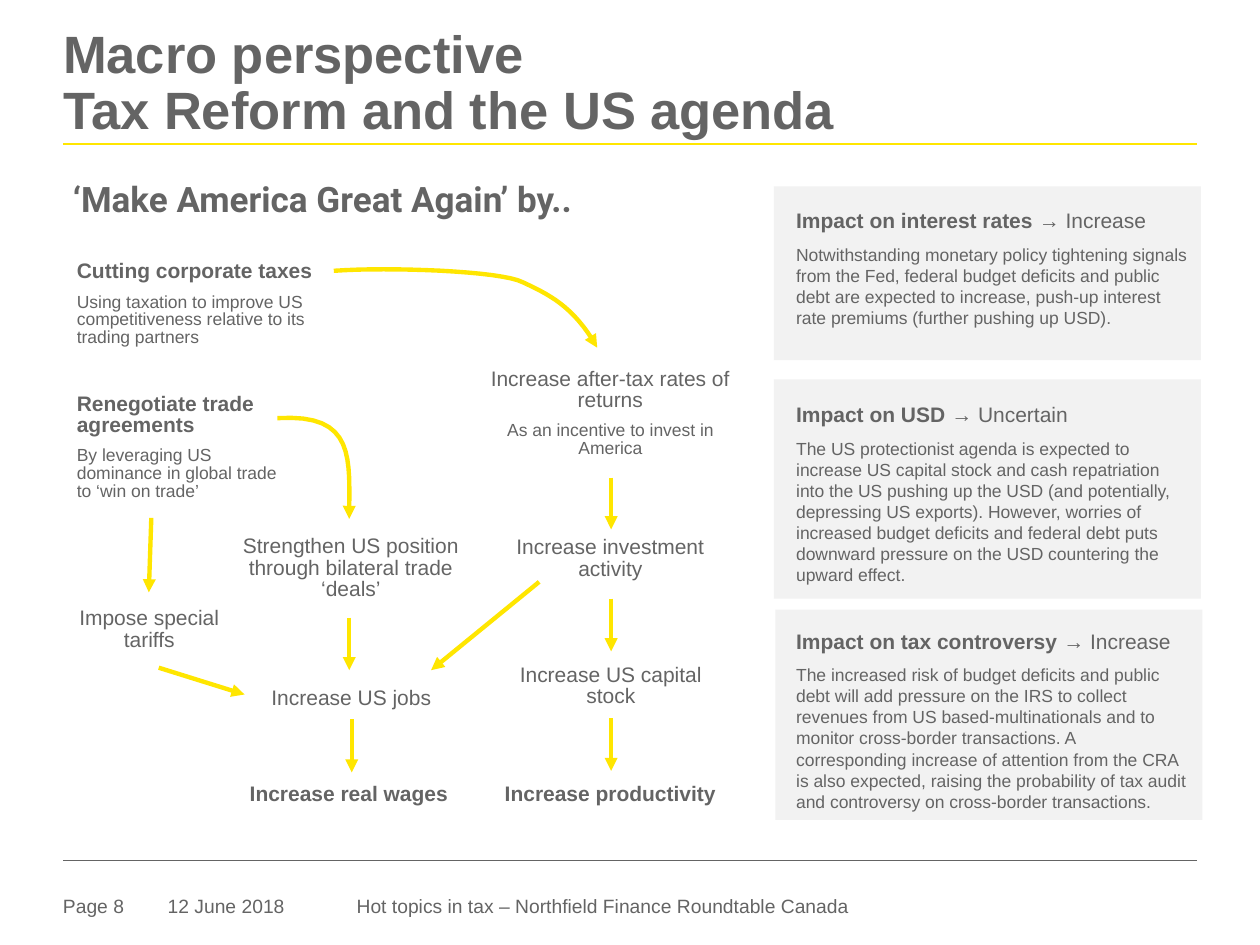
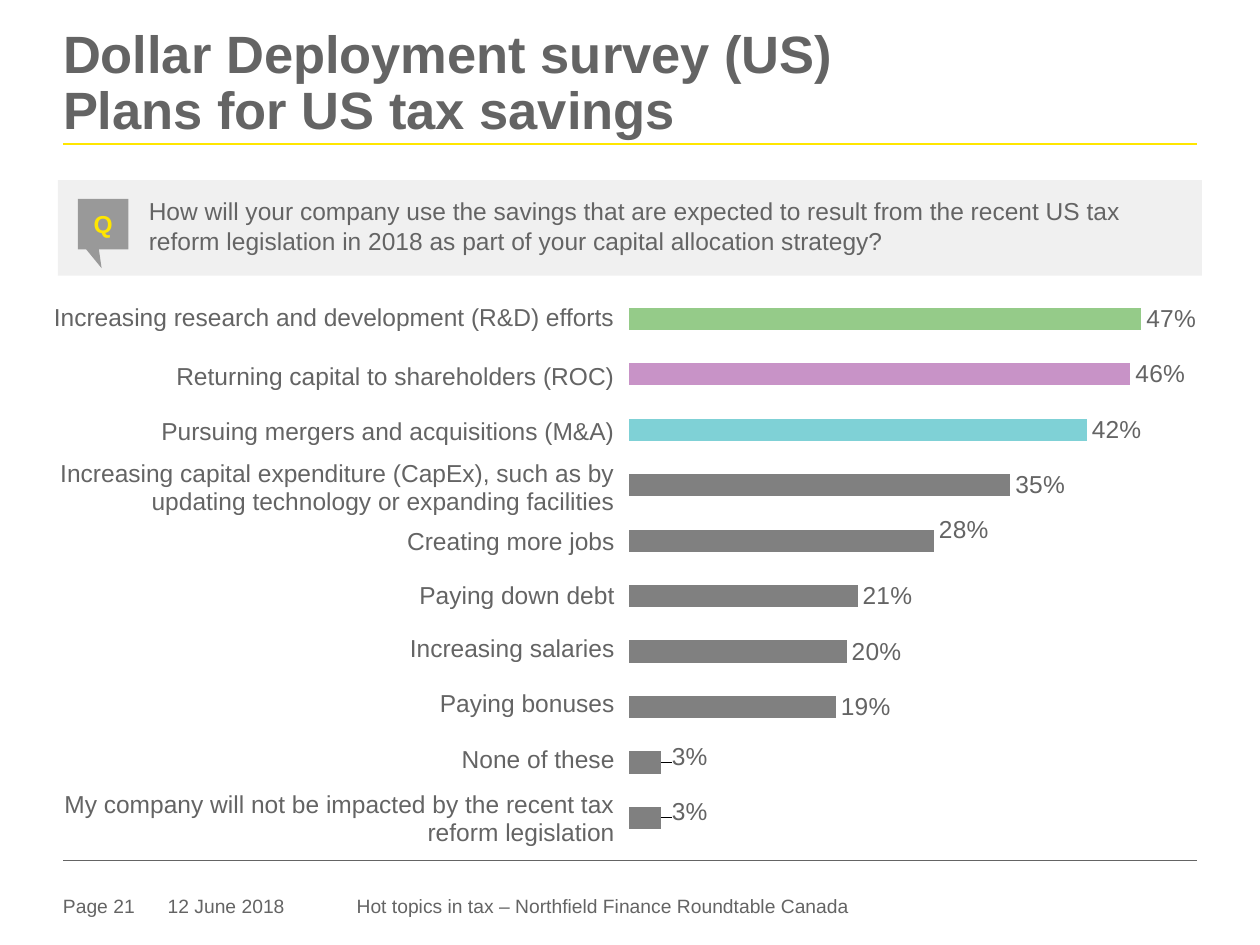
"""Build two slides on US tax reform: a policy flow and a survey chart."""
from dataclasses import dataclass

import lxml.etree
import pptx
import pptx.chart.chart
import pptx.chart.data
import pptx.dml.color
import pptx.enum.chart
import pptx.enum.shapes
import pptx.enum.text
import pptx.oxml.ns
import pptx.shapes.base
import pptx.slide
import pptx.text.text
import pptx.util

Cm = pptx.util.Cm
Pt = pptx.util.Pt
qn = pptx.oxml.ns.qn
Align = pptx.enum.text.PP_ALIGN
Anchor = pptx.enum.text.MSO_ANCHOR
ShapeKind = pptx.enum.shapes.MSO_SHAPE

GREY = "646464"
YELLOW = "FFE600"
PANEL_GREY = "F2F2F2"
QUESTION_GREY = "F0F0F0"
CALLOUT_GREY = "999999"
BAR_GREY = "808080"
PERCENT_FORMAT = '0"%"'
CURVE_STEPS = 16

Point = tuple[float, float]


@dataclass(frozen=True)
class Note:
    left: float
    top: float
    width: float
    heading: str
    body: str = ""
    bold: bool = False
    align: Align = Align.CENTER


@dataclass(frozen=True)
class Impact:
    left: float
    top: float
    height: float
    text_top: float
    subject: str
    outcome: str
    body: str


@dataclass(frozen=True)
class Answer:
    label: str
    percent: int
    row_height: float
    color: str = BAR_GREY
    label_shift: Point | None = None


NOTES = (
    Note(1.55, 5.18, 4.95, "Cutting corporate taxes",
         "Using taxation to improve US competitiveness relative to its trading partners",
         True, Align.LEFT),
    Note(1.55, 7.85, 4.11, "Renegotiate trade agreements",
         "By leveraging US dominance in global trade to ‘win on trade’", True, Align.LEFT),
    Note(9.83, 7.34, 4.95, "Increase after-tax rates of returns",
         "As an incentive to invest in America"),
    Note(9.83, 10.74, 4.95, "Increase investment activity"),
    Note(9.98, 13.31, 4.67, "Increase US capital stock"),
    Note(9.83, 15.72, 4.95, "Increase productivity", bold=True),
    Note(4.6, 10.72, 4.95, "Strengthen US position through bilateral trade ‘deals’"),
    Note(4.75, 13.77, 4.67, "Increase US jobs"),
    Note(4.7, 15.72, 4.67, "Increase real wages", bold=True),
    Note(1.09, 12.17, 3.84, "Impose special tariffs"),
)

ARROWS: tuple[tuple[Point, Point], ...] = (
    ((12.32, 9.63), (12.32, 10.67)),
    ((12.32, 12.07), (12.32, 13.13)),
    ((12.32, 14.48), (12.32, 15.54)),
    ((7.04, 12.45), (7.04, 13.51)),
    ((7.09, 14.5), (7.09, 15.57)),
    ((10.87, 11.73), (8.69, 13.51)),
    ((3.2, 13.46), (4.93, 14.0)),
    ((3.05, 10.44), (3.0, 11.94)),
)

CURVED_ARROWS: tuple[tuple[Point, ...], ...] = (
    ((6.73, 5.46), (7.85, 5.38), (10.08, 5.46), (10.54, 5.69),
     (11.02, 5.92), (11.56, 6.15), (12.04, 7.01)),
    ((5.59, 8.43), (7.19, 8.33), (7.04, 9.25), (7.04, 10.46)),
)

IMPACTS = (
    Impact(15.6, 3.76, 3.5, 4.17, "Impact on interest rates ", "→ Increase",
           "Notwithstanding monetary policy tightening signals from the Fed, federal budget "
           "deficits and public debt are expected to increase, push-up interest rate premiums "
           "(further pushing up USD)."),
    Impact(15.6, 7.65, 4.42, 8.08, "Impact on USD ", "→ Uncertain",
           "The US protectionist agenda is expected to increase US capital stock and cash "
           "repatriation into the US pushing up the USD (and potentially, depressing US "
           "exports). However, worries of increased budget deficits and federal debt puts "
           "downward pressure on the USD countering the upward effect."),
    Impact(15.63, 12.29, 4.24, 12.65, "Impact on tax controversy ", "→ Increase",
           "The increased risk of budget deficits and public debt will add pressure on the IRS "
           "to collect revenues from US based-multinationals and to monitor cross-border "
           "transactions. A corresponding increase of attention from the CRA is also expected, "
           "raising the probability of tax audit and controversy on cross-border transactions."),
)

ANSWERS = (
    Answer("Increasing research and development (R&D) efforts", 47, 0.74, "95CB89"),
    Answer("Returning capital to shareholders (ROC)", 46, 1.19, "C893C7"),
    Answer("Pursuing mergers and acquisitions (M&A)", 42, 1.12, "7FD1D6"),
    Answer("Increasing capital expenditure (CapEx), such as by updating technology or "
           "expanding facilities", 35, 1.4),
    Answer("Creating more jobs", 28, 0.81, label_shift=(0, -0.02)),
    Answer("Paying down debt", 21, 1.09),
    Answer("Increasing salaries", 20, 1.07),
    Answer("Paying bonuses", 19, 1.12),
    Answer("None of these", 3, 1.12, label_shift=(0.01, -0.01)),
    Answer("My company will not be impacted by the recent tax reform legislation", 3, 1.47,
           label_shift=(0.01, -0.01)),
)


def rgb(value: str) -> pptx.dml.color.RGBColor:
    return pptx.dml.color.RGBColor.from_string(value)


def style_font(font: pptx.text.text.Font, size: float, bold: bool = False,
               color: str = GREY, name: str = "Arial") -> None:
    font.name, font.size, font.bold = name, Pt(size), bold
    font.color.rgb = rgb(color)


def prepare_frame(frame: pptx.text.text.TextFrame, top_margin: float = 0,
                  wrap: bool = True) -> None:
    frame.margin_left = frame.margin_right = frame.margin_bottom = 0
    frame.margin_top = Cm(top_margin)
    frame.word_wrap = wrap
    frame.auto_size = pptx.enum.text.MSO_AUTO_SIZE.NONE
    frame.vertical_anchor = Anchor.TOP


def add_text(slide: pptx.slide.Slide, left: float, top: float, width: float, height: float,
             text: str, size: float, top_margin: float = 0, wrap: bool = True,
             bold: bool = False, name: str = "Arial") -> pptx.text.text.TextFrame:
    box = slide.shapes.add_textbox(Cm(left), Cm(top), Cm(width), Cm(height))
    frame = box.text_frame
    prepare_frame(frame, top_margin, wrap)
    frame.text = text
    style_font(frame.paragraphs[0].runs[0].font, size, bold, name=name)
    return frame


def add_panel(slide: pptx.slide.Slide, kind: ShapeKind, left: float, top: float,
              width: float, height: float, color: str) -> pptx.shapes.base.BaseShape:
    panel = slide.shapes.add_shape(kind, Cm(left), Cm(top), Cm(width), Cm(height))
    panel.shadow.inherit = False
    panel.fill.solid()
    panel.fill.fore_color.rgb = rgb(color)
    panel.line.fill.background()
    return panel


def style_line(shape: pptx.shapes.base.BaseShape, color: str, weight: float,
               arrow: bool = False) -> None:
    shape.line.color.rgb = rgb(color)
    shape.line.width = Pt(weight)
    if arrow:
        outline = shape._element.spPr.find(qn("a:ln"))
        lxml.etree.SubElement(outline, qn("a:tailEnd"), type="triangle")


def add_line(slide: pptx.slide.Slide, start: Point, end: Point, color: str,
             weight: float, arrow: bool = False) -> None:
    connector = slide.shapes.add_connector(
        pptx.enum.shapes.MSO_CONNECTOR.STRAIGHT, *map(Cm, start + end))
    style_line(connector, color, weight, arrow)
    lxml.etree.SubElement(connector._element.spPr, qn("a:effectLst"))


def curve_points(controls: tuple[Point, ...]) -> list[Point]:
    points = [controls[0]]
    for first in range(0, len(controls) - 1, 3):
        segment = controls[first:first + 4]
        for step in range(1, CURVE_STEPS + 1):
            t = step / CURVE_STEPS
            weights = ((1 - t) ** 3, 3 * t * (1 - t) ** 2, 3 * t ** 2 * (1 - t), t ** 3)
            points.append(tuple(sum(weight * point[axis] for weight, point
                                    in zip(weights, segment)) for axis in (0, 1)))
    return points


def add_curved_arrow(slide: pptx.slide.Slide, controls: tuple[Point, ...]) -> None:
    start, *others = [(Cm(x), Cm(y)) for x, y in curve_points(controls)]
    builder = slide.shapes.build_freeform(*start)
    builder.add_line_segments(others, close=False)
    curve = builder.convert_to_shape()
    curve.shadow.inherit = False
    curve.fill.background()
    style_line(curve, YELLOW, 2.5, arrow=True)


def add_note(slide: pptx.slide.Slide, note: Note) -> None:
    frame = add_text(slide, note.left, note.top, note.width, 1.9 if note.body else 0.95,
                     note.heading, 12, 0.1, bold=note.bold)
    if note.body:
        para = frame.add_paragraph()
        para.text = note.body
        style_font(para.runs[0].font, 10)
    for para in frame.paragraphs:
        para.alignment, para.line_spacing, para.space_after = note.align, 0.85, Pt(6)


def add_impact(slide: pptx.slide.Slide, impact: Impact) -> None:
    add_panel(slide, ShapeKind.RECTANGLE, impact.left, impact.top, 8.61, impact.height,
              PANEL_GREY)
    frame = add_text(slide, 16.05, impact.text_top, 7.9, impact.height - 0.5,
                     impact.subject, 12, 0.1, bold=True)
    heading = frame.paragraphs[0]
    heading.line_spacing, heading.space_after = 0.85, Pt(6)
    span = heading.add_run()
    span.text = impact.outcome
    style_font(span.font, 12)
    para = frame.add_paragraph()
    para.text = impact.body
    style_font(para.runs[0].font, 10)


def add_page(deck: pptx.presentation.Presentation, title: str, number: int) -> pptx.slide.Slide:
    slide = deck.slides.add_slide(deck.slide_layouts[5])
    holder = slide.shapes.title
    holder.left, holder.top, holder.width, holder.height = map(Cm, (1.27, 0.56, 22.86, 2.39))
    prepare_frame(holder.text_frame)
    holder.text_frame.text = title
    para = holder.text_frame.paragraphs[0]
    para.alignment, para.line_spacing = Align.LEFT, 0.9
    for span in para.runs:
        style_font(span.font, 30, bold=True)
    add_line(slide, (1.27, 2.9), (24.13, 2.9), YELLOW, 1.5)
    add_line(slide, (1.27, 17.35), (24.13, 17.35), GREY, 0.25)
    add_text(slide, 1.27, 18.03, 2, 0.56, f"Page {number}", 11)
    add_text(slide, 3.38, 18.03, 3.3, 0.56, "12 June 2018", 11, wrap=False)
    add_text(slide, 7.19, 18.03, 12, 0.56,
             "Hot topics in tax – Northfield Finance Roundtable Canada", 11)
    return slide


def manual_layout(**settings: object) -> lxml.etree._Element:
    layout = lxml.etree.Element(qn("c:layout"))
    manual = lxml.etree.SubElement(layout, qn("c:manualLayout"))
    for name, value in settings.items():
        lxml.etree.SubElement(manual, qn(f"c:{name}"), val=str(value))
    return layout


def add_savings_chart(slide: pptx.slide.Slide) -> None:
    data = pptx.chart.data.CategoryChartData()
    data.categories = [str(place) for place in range(1, len(ANSWERS) + 1)]
    data.add_series("Series 1", [answer.percent for answer in ANSWERS])
    chart = slide.shapes.add_chart(pptx.enum.chart.XL_CHART_TYPE.BAR_CLUSTERED, Cm(12.67),
                                   Cm(5.87), Cm(11.46), Cm(11.18), data).chart
    chart.has_legend = chart.has_title = False
    style_font(chart.font, 14)
    chart.category_axis.reverse_order = True
    scale = chart.value_axis
    scale.minimum_scale, scale.maximum_scale, scale.major_unit = 0, 50, 10
    for axis in (chart.category_axis, scale):
        axis.has_major_gridlines = axis.visible = False
    area = chart._chartSpace.chart.plotArea
    for layout in area.findall(qn("c:layout")):
        area.remove(layout)
    area.insert(0, manual_layout(layoutTarget="inner", xMode="edge", yMode="edge",
                                 x=0, y=0, w=0.96, h=1))
    plot = chart.plots[0]
    plot.gap_width, plot.vary_by_categories = 150, False
    series = plot.series[0]
    series.format.fill.solid()
    series.format.fill.fore_color.rgb = rgb(BAR_GREY)
    outside = pptx.enum.chart.XL_LABEL_POSITION.OUTSIDE_END
    labels = series.data_labels
    labels.show_value, labels.position = True, outside
    labels.number_format, labels.number_format_is_linked = PERCENT_FORMAT, False
    style_font(labels.font, 14)
    for index, answer in enumerate(ANSWERS):
        point = series.points[index]
        if answer.color != BAR_GREY:
            point.format.fill.solid()
            point.format.fill.fore_color.rgb = rgb(answer.color)
        if answer.label_shift:
            style_font(point.data_label.font, 14)
            point.data_label.position = outside
            label = labels._element.findall(qn("c:dLbl"))[-1]
            x, y = answer.label_shift
            label.insert(1, manual_layout(x=x, y=y))
            label.insert(2, lxml.etree.Element(qn("c:numFmt"), formatCode=PERCENT_FORMAT,
                                               sourceLinked="0"))


def add_answer_table(slide: pptx.slide.Slide) -> None:
    height = sum(answer.row_height for answer in ANSWERS)
    table = slide.shapes.add_table(len(ANSWERS), 1, Cm(0.91), Cm(5.94), Cm(11.51),
                                   Cm(height)).table
    table.first_row = table.horz_banding = False
    for row, answer in zip(table.rows, ANSWERS):
        row.height = Cm(answer.row_height)
        cell = row.cells[0]
        cell.fill.background()
        cell.vertical_anchor = Anchor.BOTTOM
        cell.margin_left = cell.margin_right = cell.margin_top = Cm(0.03)
        cell.margin_bottom = 0
        cell.text_frame.text = answer.label
        para = cell.text_frame.paragraphs[0]
        para.alignment = Align.RIGHT
        style_font(para.runs[0].font, 14)


def add_question(slide: pptx.slide.Slide) -> None:
    add_panel(slide, ShapeKind.RECTANGLE, 1.17, 3.63, 23.06, 1.93, QUESTION_GREY)
    callout = add_panel(slide, ShapeKind.RECTANGULAR_CALLOUT, 1.57, 4.01, 1.02, 1.02,
                        CALLOUT_GREY)
    callout.adjustments[0], callout.adjustments[1] = -0.03, 0.87
    prepare_frame(callout.text_frame)
    callout.text_frame.vertical_anchor = Anchor.MIDDLE
    callout.text_frame.text = "Q"
    para = callout.text_frame.paragraphs[0]
    para.alignment = Align.CENTER
    style_font(para.runs[0].font, 14, True, YELLOW)
    add_text(slide, 3, 3.96, 19.94, 1.19,
             "How will your company use the savings that are expected to result from the recent "
             "US tax reform legislation in 2018 as part of your capital allocation strategy?", 14)


def main() -> None:
    """Draw both slides and save the deck."""
    deck = pptx.Presentation()
    deck.slide_width, deck.slide_height = Cm(25.4), Cm(19.05)
    macro = add_page(deck, "Macro perspective\vTax Reform and the US agenda", 8)
    add_text(macro, 1.47, 3.58, 11.96, 1.09, "‘Make America Great Again’ by..", 20,
             bold=True, name="Roboto")
    for note in NOTES:
        add_note(macro, note)
    for start, end in ARROWS:
        add_line(macro, start, end, YELLOW, 2.5, arrow=True)
    for controls in CURVED_ARROWS:
        add_curved_arrow(macro, controls)
    for impact in IMPACTS:
        add_impact(macro, impact)
    survey = add_page(deck, "Dollar Deployment survey (US)\vPlans for US tax savings", 21)
    add_question(survey)
    add_savings_chart(survey)
    add_answer_table(survey)
    deck.save("out.pptx")


if __name__ == "__main__":
    main()
